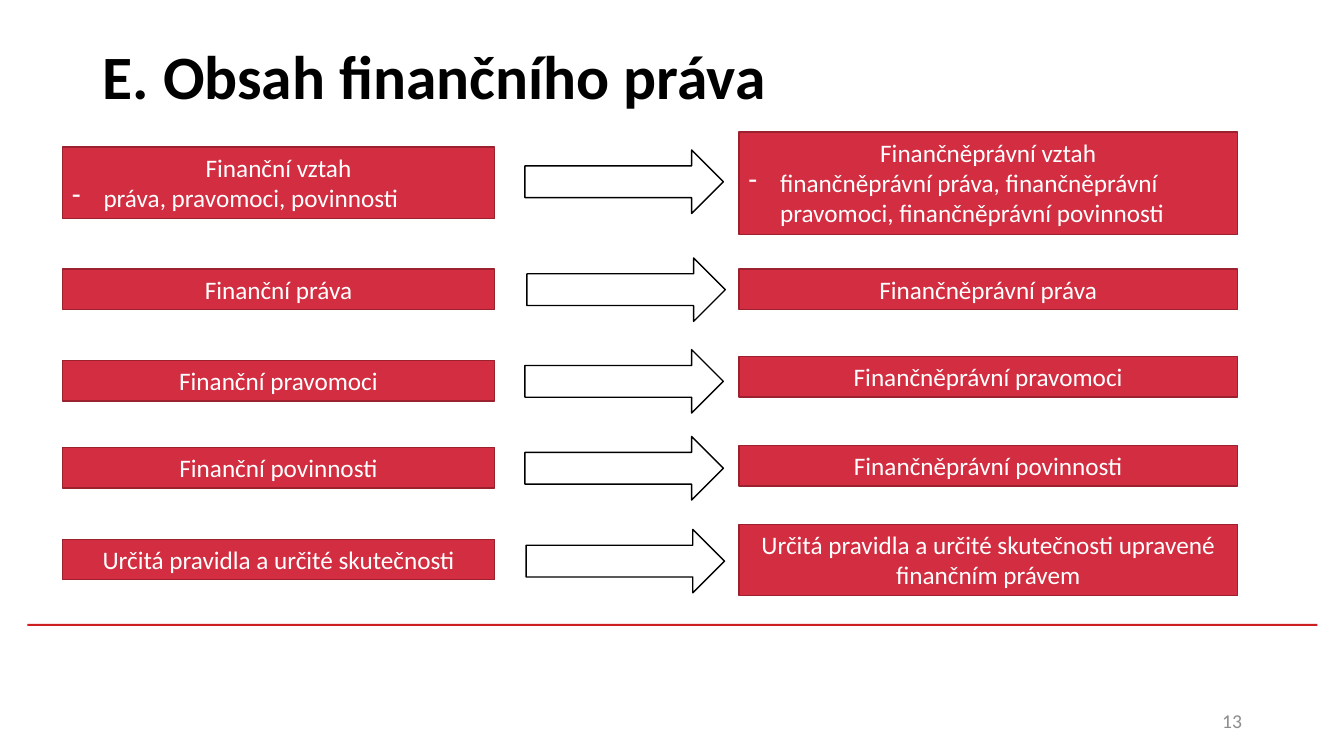
from dataclasses import dataclass

from lxml.etree import SubElement
from pptx import Presentation
from pptx.dml.color import RGBColor
from pptx.enum.shapes import MSO_SHAPE as Preset
from pptx.enum.text import MSO_ANCHOR as Anchor, MSO_AUTO_SIZE as AutoSize, PP_ALIGN as Align
from pptx.oxml.ns import qn
from pptx.util import Cm, Pt


@dataclass(frozen=True)
class Theme:
    font: str = "Calibri"
    red: str = "D22D40"
    dark_red: str = "9B212F"
    rule_red: str = "CD1F21"
    black: str = "000000"
    white: str = "FFFFFF"
    grey: str = "8C8C8C"
    title_size: int = 44
    body_size: int = 18
    number_size: int = 14


THEME = Theme()

# Columns: left edge and width in cm
LEFT_COLUMN = (1.57, 10.9)
RIGHT_COLUMN = (18.62, 12.57)
ARROW_SIZE = (5, 1.6)

# Box height in cm: one line, and each further line
FIRST_LINE, NEXT_LINE = 1.02, 0.78

# Each box: top in cm, number of lines, heading, optional dash item
LEFT_BOXES = [
    (3.71, 2, "Finanční vztah", "práva, pravomoci, povinnosti"),
    (6.78, 1, "Finanční práva", None),
    (9.09, 1, "Finanční pravomoci", None),
    (11.28, 1, "Finanční povinnosti", None),
    (13.59, 1, "Určitá pravidla a určité skutečnosti", None),
]
RIGHT_BOXES = [
    (3.33, 3, "Finančněprávní vztah",
     "finančněprávní práva, finančněprávní pravomoci, finančněprávní povinnosti"),
    (6.78, 1, "Finančněprávní práva", None),
    (8.99, 1, "Finančněprávní pravomoci", None),
    (11.23, 1, "Finančněprávní povinnosti", None),
    (13.21, 2, "Určitá pravidla a určité skutečnosti upravené finančním právem", None),
]
# Left and top in cm
ARROWS = [(13.23, 3.78), (13.28, 6.5), (13.23, 8.81), (13.23, 11), (13.26, 13.34)]


def add_span(para, text, size, color, bold=False):
    span = para.add_run()
    span.text = text
    span.font.name = THEME.font
    span.font.size = Pt(size)
    span.font.bold = bold
    span.font.color.rgb = RGBColor.from_string(color)


def set_dash(para):
    properties = para._p.get_or_add_pPr()
    properties.set("marL", str(Cm(0.79)))
    properties.set("indent", str(-Cm(0.79)))
    SubElement(properties, qn("a:buFontTx"))
    SubElement(properties, qn("a:buChar"), char="-")


def add_preset(page, preset, left, top, width, height, fill, line=None):
    shape = page.shapes.add_shape(preset, Cm(left), Cm(top), Cm(width), Cm(height))
    shape.shadow.inherit = False
    shape.fill.solid()
    shape.fill.fore_color.rgb = RGBColor.from_string(fill)
    if line:
        shape.line.color.rgb = RGBColor.from_string(line)
        shape.line.width = Pt(1)
    else:
        shape.line.fill.background()
    return shape


def add_label(page, left, top, width, height, text, size, color, align, bold=False):
    box = page.shapes.add_textbox(Cm(left), Cm(top), Cm(width), Cm(height))
    frame = box.text_frame
    frame.word_wrap = True
    frame.vertical_anchor = Anchor.MIDDLE
    para = frame.paragraphs[0]
    para.alignment = align
    add_span(para, text, size, color, bold)


def add_box(page, column, top, lines, heading, item):
    left, width = column
    height = FIRST_LINE + NEXT_LINE * (lines - 1)
    box = add_preset(page, Preset.RECTANGLE, left, top, width, height,
                     THEME.red, THEME.dark_red)
    frame = box.text_frame
    frame.word_wrap = True
    frame.auto_size = AutoSize.SHAPE_TO_FIT_TEXT
    frame.vertical_anchor = Anchor.TOP
    para = frame.paragraphs[0]
    para.alignment = Align.CENTER
    add_span(para, heading, THEME.body_size, THEME.white)
    if item:
        para = frame.add_paragraph()
        para.alignment = Align.LEFT
        set_dash(para)
        add_span(para, item, THEME.body_size, THEME.white)


def main():
    deck = Presentation()
    deck.slide_width, deck.slide_height = Cm(33.87), Cm(19.05)
    page = deck.slides.add_slide(deck.slide_layouts[6])

    # Rule, title and page number
    add_preset(page, Preset.RECTANGLE, 0.69, 15.72, 32.51, 0.05, THEME.rule_red)
    add_label(page, 2.34, 0.05, 29.21, 3.68, "E. Obsah finančního práva",
              THEME.title_size, THEME.black, Align.LEFT, bold=True)
    add_label(page, 23.93, 17.65, 7.62, 1.02, "13",
              THEME.number_size, THEME.grey, Align.RIGHT)

    # Two columns of boxes
    for column, boxes in ((LEFT_COLUMN, LEFT_BOXES), (RIGHT_COLUMN, RIGHT_BOXES)):
        for box in boxes:
            add_box(page, column, *box)

    # Arrows between the columns
    for left, top in ARROWS:
        add_preset(page, Preset.RIGHT_ARROW, left, top, *ARROW_SIZE,
                   THEME.white, THEME.black)

    deck.save("out.pptx")


if __name__ == "__main__":
    main()
